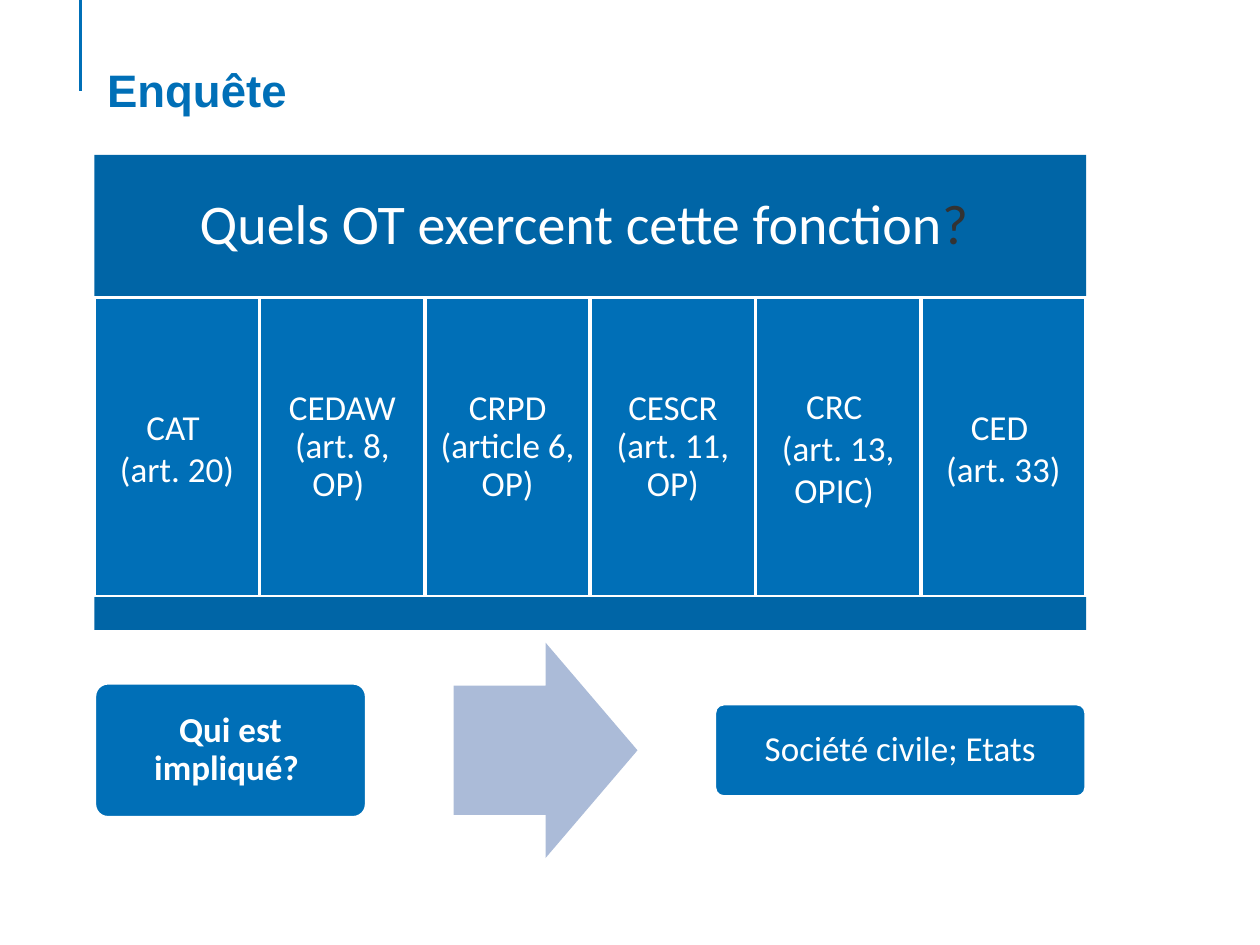
from lxml.etree import SubElement
from pptx import Presentation
from pptx.dml.color import RGBColor
from pptx.enum.shapes import MSO_CONNECTOR, MSO_SHAPE
from pptx.enum.text import MSO_ANCHOR, PP_ALIGN
from pptx.oxml.ns import qn
from pptx.util import Inches, Pt

BLUE, DARK_BLUE, PALE_BLUE = "006FB7", "0065A6", "ABBBD8"
WHITE, GREY = "FFFFFF", "333333"

TITLE = "Enquête"
QUESTION = [("Quels OT exercent cette fonction", WHITE), ("? ", GREY)]
COMMITTEES = [
    ["CAT ", "(art. 20)"],
    ["CEDAW (art. 8, OP) "],
    ["CRPD (article 6, OP)"],
    ["CESCR (art. 11, OP)"],
    ["CRC ", "(art. 13, OPIC) "],
    ["CED ", "(art. 33)"],
]
WHO, ACTORS = "Qui est impliqué? ", "Société civile; Etats"

LEFT, WIDTH = 0.75, 7.87
HEADER_TOP, HEADER_HEIGHT = 1.23, 1.13
GRID_HEIGHT, FOOTER_HEIGHT = 2.38, 0.26
FLOW_MIDDLE = 5.955
COLUMN = WIDTH / len(COMMITTEES)


def color(value):
    return RGBColor.from_string(value)


def apply(target, values):
    for name, value in values.items():
        setattr(target, name, value)


def add_block(kind, left, top, width, height, fill, outlined=False, adjustments=()):
    shape = slide.shapes.add_shape(
        kind, Inches(left), Inches(top), Inches(width), Inches(height))
    shape.shadow.inherit = False
    shape.fill.solid()
    shape.fill.fore_color.rgb = color(fill)
    if outlined:
        shape.line.color.rgb = color(WHITE)
        shape.line.width = Pt(2)
    else:
        shape.line.fill.background()
    for index, value in enumerate(adjustments):
        shape.adjustments[index] = value
    return shape


def write(shape, paragraphs, size=20, inset=0.08, bold=False):
    frame = shape.text_frame
    margins = ("margin_left", "margin_top", "margin_right", "margin_bottom")
    apply(frame, dict.fromkeys(margins, Inches(inset)))
    apply(frame, {"word_wrap": True, "vertical_anchor": MSO_ANCHOR.MIDDLE})
    spacing = 0.9 if len(paragraphs) == 1 else 1.0
    for index, runs in enumerate(paragraphs):
        paragraph = frame.add_paragraph() if index else frame.paragraphs[0]
        apply(paragraph, {"alignment": PP_ALIGN.CENTER, "line_spacing": spacing})
        for text, text_color in runs:
            run = paragraph.add_run()
            run.text = text
            apply(run.font, {"name": "Calibri", "size": Pt(size), "bold": bold})
            run.font.color.rgb = color(text_color)


def add_flow_block(kind, left, width, height, fill, outlined, adjustments):
    return add_block(kind, left, FLOW_MIDDLE - height / 2, width, height,
                     fill, outlined, adjustments)


presentation = Presentation()
apply(presentation, {"slide_width": Inches(10), "slide_height": Inches(7.5)})
slide = presentation.slides.add_slide(presentation.slide_layouts[5])

accent = slide.shapes.add_connector(
    MSO_CONNECTOR.STRAIGHT, Inches(0.64), 0, Inches(0.64), Inches(0.72))
accent.line.color.rgb = color(BLUE)
accent.line.width = Pt(2)
SubElement(accent._element.spPr, qn("a:effectLst"))

title = slide.shapes.title
apply(title, {"left": Inches(LEFT), "top": Inches(0.44),
              "width": Inches(8.34), "height": Inches(0.88)})
title.text_frame.text = TITLE
title.text_frame.vertical_anchor = MSO_ANCHOR.TOP
heading = title.text_frame.paragraphs[0]
heading.alignment = PP_ALIGN.LEFT
apply(heading.font, {"name": "Arial", "size": Pt(26), "bold": True})
heading.font.color.rgb = color(BLUE)

header = add_block(MSO_SHAPE.RECTANGLE, LEFT, HEADER_TOP, WIDTH, HEADER_HEIGHT, DARK_BLUE)
write(header, [QUESTION], size=32, inset=0.13)

grid_top = HEADER_TOP + HEADER_HEIGHT
for index, lines in enumerate(COMMITTEES):
    cell = add_block(MSO_SHAPE.RECTANGLE, LEFT + index * COLUMN, grid_top,
                     COLUMN, GRID_HEIGHT, BLUE, outlined=True)
    write(cell, [[(line, WHITE)] for line in lines])
add_block(MSO_SHAPE.RECTANGLE, LEFT, grid_top + GRID_HEIGHT, WIDTH, FOOTER_HEIGHT, DARK_BLUE)

who = add_flow_block(MSO_SHAPE.ROUNDED_RECTANGLE, LEFT, 2.16, 1.07, BLUE, True, [0.1])
write(who, [[(WHO, WHITE)]], bold=True)
add_flow_block(MSO_SHAPE.RIGHT_ARROW, 3.6, 1.46, 1.71, PALE_BLUE, False, [0.6, 0.5])
actors = add_flow_block(MSO_SHAPE.ROUNDED_RECTANGLE, 5.67, 2.95, 0.74, BLUE, True, [0.1])
write(actors, [[(ACTORS, WHITE)]])

presentation.save("out.pptx")
